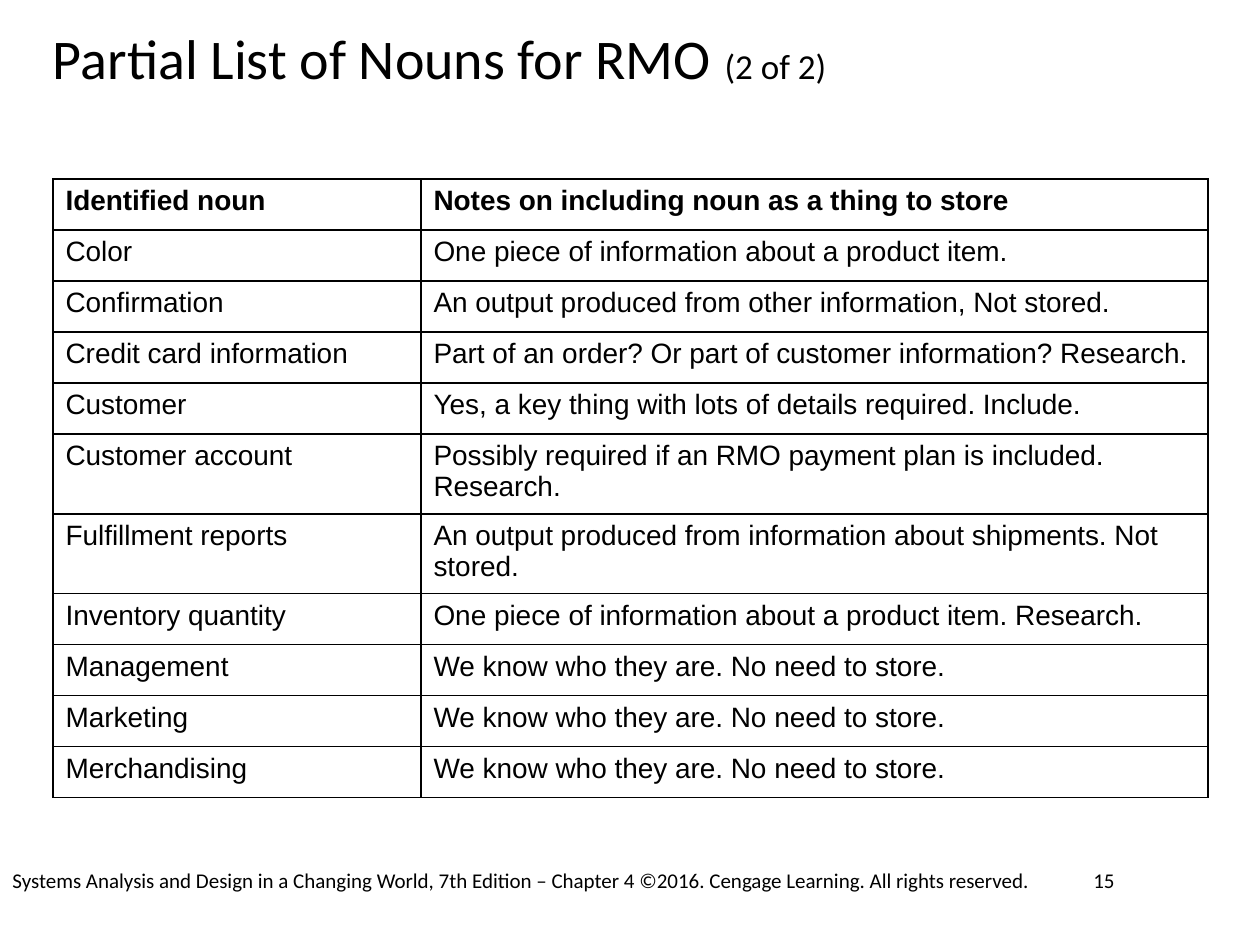
"""Build the slide that lists nouns for RMO with notes on storing each one."""
from dataclasses import dataclass

from lxml import etree
from pptx import Presentation
from pptx.dml.color import RGBColor
from pptx.oxml.ns import qn
from pptx.util import Emu, Pt

SCALE = 914400 / 126
SIDES = ("a:lnL", "a:lnR", "a:lnT", "a:lnB")


@dataclass(frozen=True)
class Theme:
    ink: str = "000000"
    head: str = "Calibri"
    body: str = "Arial"
    title: int = 32
    count: int = 20
    cell: int = 16
    foot: int = 12
    rule: int = 1


THEME = Theme()

ROWS = [
    ("Identified noun", "Notes on including noun as a thing to store"),
    ("Color", "One piece of information about a product item."),
    ("Confirmation", "An output produced from other information, Not stored."),
    ("Credit card information", "Part of an order? Or part of customer information? Research."),
    ("Customer", "Yes, a key thing with lots of details required. Include."),
    ("Customer account", "Possibly required if an RMO payment plan is included. Research."),
    ("Fulfillment reports", "An output produced from information about shipments. Not stored."),
    ("Inventory quantity", "One piece of information about a product item. Research."),
    ("Management", "We know who they are. No need to store."),
    ("Marketing", "We know who they are. No need to store."),
    ("Merchandising", "We know who they are. No need to store."),
]


def px(count):
    return Emu(round(count * SCALE))


def write(para, text, size, face=THEME.head, bold=False):
    run = para.add_run()
    run.text = text
    run.font.name = face
    run.font.size = Pt(size)
    run.font.bold = bold
    run.font.color.rgb = RGBColor.from_string(THEME.ink)


def add_box(slide, left, top, width, height):
    frame = slide.shapes.add_textbox(px(left), px(top), px(width), px(height)).text_frame
    frame.word_wrap = True
    return frame


def add_title(slide, text, count):
    frame = add_box(slide, 53, 31, 1155, 60)
    frame.margin_left = frame.margin_right = frame.margin_top = frame.margin_bottom = 0
    para = frame.paragraphs[0]
    para.line_spacing = 0.9
    write(para, text, THEME.title)
    write(para, count, THEME.count)


def add_foot(slide, text, left, width):
    frame = add_box(slide, left, 861, width, 63)
    write(frame.paragraphs[0], text, THEME.foot)


def frame_cell(cell):
    props = cell._tc.get_or_add_tcPr()
    for side in SIDES:
        line = etree.SubElement(props, qn(side), w=str(Pt(THEME.rule)))
        fill = etree.SubElement(line, qn("a:solidFill"))
        etree.SubElement(fill, qn("a:srgbClr"), val=THEME.ink)
    cell.fill.background()


def add_grid(slide, rows, widths, height):
    shape = slide.shapes.add_table(
        len(rows), len(widths), px(53), px(179), px(sum(widths)), px(height * len(rows)))
    table = shape.table
    table.horz_banding = False
    for column, width in zip(table.columns, widths):
        column.width = px(width)
    for index, texts in enumerate(rows):
        table.rows[index].height = px(height)
        for cell, text in zip(table.rows[index].cells, texts):
            frame_cell(cell)
            para = cell.text_frame.paragraphs[0]
            write(para, text, THEME.cell, face=THEME.body, bold=index == 0)


def main():
    deck = Presentation()
    deck.slide_width, deck.slide_height = px(1260), px(945)
    slide = deck.slides.add_slide(deck.slide_layouts[6])
    add_title(slide, "Partial List of Nouns for RMO ", "(2 of 2)")
    add_grid(slide, ROWS, (368, 787), 51)
    add_foot(slide, "15", 1081, 116)
    add_foot(
        slide,
        "Systems Analysis and Design in a Changing World, 7th Edition – Chapter 4 "
        "©2016. Cengage Learning. All rights reserved.",
        0, 1050)
    deck.save("out.pptx")


if __name__ == "__main__":
    main()
